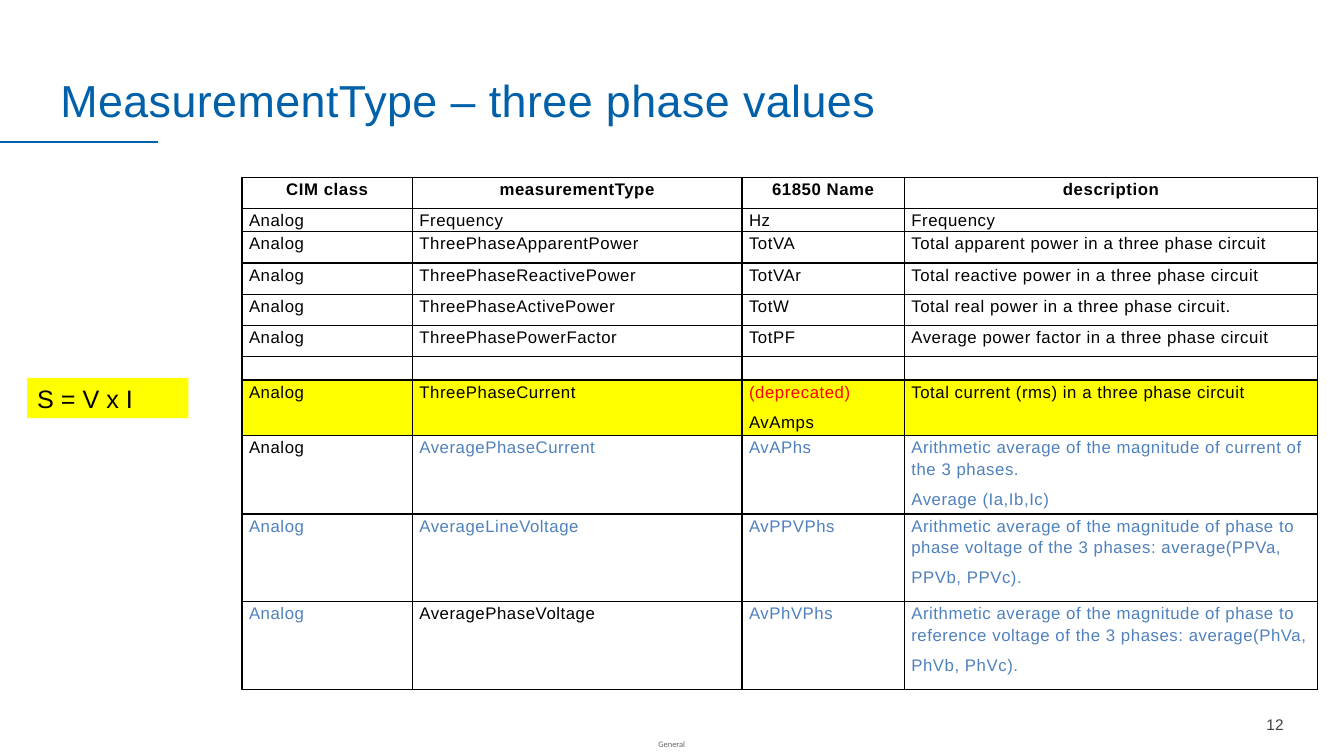
from lxml import etree
from pptx import Presentation
from pptx.dml.color import RGBColor
from pptx.enum.shapes import MSO_CONNECTOR, MSO_SHAPE
from pptx.enum.text import MSO_ANCHOR, PP_ALIGN
from pptx.oxml.ns import qn
from pptx.util import Inches, Pt

BLACK = RGBColor(0x00, 0x00, 0x00)
BLUE = RGBColor(0x00, 0x60, 0xA9)
SOFT_BLUE = RGBColor(0x4F, 0x81, 0xBD)
RED = RGBColor(0xFF, 0x00, 0x00)
YELLOW = RGBColor(0xFF, 0xFF, 0x00)
GREY = RGBColor(0x62, 0x64, 0x69)
DARK_GREY = RGBColor(0x40, 0x40, 0x40)

# Content: one row per measurement, "\n" separates paragraphs
TITLE = "MeasurementType – three phase values"
ROWS = [
    ("CIM class", "measurementType", "61850 Name", "description"),
    ("Analog", "Frequency", "Hz", "Frequency"),
    ("Analog", "ThreePhaseApparentPower", "TotVA",
     "Total apparent power in a three phase circuit"),
    ("Analog", "ThreePhaseReactivePower", "TotVAr",
     "Total reactive power in a three phase circuit"),
    ("Analog", "ThreePhaseActivePower", "TotW",
     "Total real power in a three phase circuit."),
    ("Analog", "ThreePhasePowerFactor", "TotPF",
     "Average power factor in a three phase circuit"),
    ("", "", "", ""),
    ("Analog", "ThreePhaseCurrent", "(deprecated)\nAvAmps",
     "Total current (rms) in a three phase circuit"),
    ("Analog", "AveragePhaseCurrent", "AvAPhs",
     "Arithmetic average of the magnitude of current of the 3 phases.\n"
     "Average (Ia,Ib,Ic)"),
    ("Analog", "AverageLineVoltage", "AvPPVPhs",
     "Arithmetic average of the magnitude of phase to phase voltage "
     "of the 3 phases: average(PPVa,\nPPVb, PPVc)."),
    ("Analog", "AveragePhaseVoltage", "AvPhVPhs",
     "Arithmetic average of the magnitude of phase to reference voltage "
     "of the 3 phases: average(PhVa,\nPhVb, PhVc)."),
]
COL_WIDTHS = [1.69, 3.27, 1.61, 4.1]
ROW_HEIGHTS = [0.31, 0.23] + [0.31] * 4 + [0.23, 0.55, 0.78, 0.87, 0.87]
DEPRECATED_ROW = 7
FIRST_NEW_ROW = 8
BLACK_IN_NEW_ROWS = {(8, 0), (10, 1)}


def style(p, size, color, font="Arial", bold=False, spacing=0):
    for r in p.runs:
        r.font.name, r.font.size, r.font.bold = font, Pt(size), bold
        r.font.color.rgb = color
        if spacing:
            r.font._element.set("spc", str(spacing))


def add_text(s, text, box, size, color, font="Arial", inset=None,
             align=PP_ALIGN.LEFT, anchor=MSO_ANCHOR.TOP, wrap=True, spacing=0):
    tf = s.shapes.add_textbox(*map(Inches, box)).text_frame
    tf.word_wrap, tf.vertical_anchor = wrap, anchor
    if inset is not None:
        tf.margin_left = tf.margin_right = Inches(inset)
        tf.margin_top = tf.margin_bottom = Inches(inset)
    p = tf.paragraphs[0]
    p.text, p.alignment = text, align
    style(p, size, color, font, spacing=spacing)
    return p


def add_borders(cell):
    tc_pr = cell._tc.get_or_add_tcPr()
    for i, side in enumerate(("lnL", "lnR", "lnT", "lnB")):
        ln = etree.Element(qn("a:" + side), w=str(Pt(1)))
        fill = etree.SubElement(ln, qn("a:solidFill"))
        etree.SubElement(fill, qn("a:srgbClr"), val=str(BLACK))
        tc_pr.insert(i, ln)


def text_color(row, col, line):
    if (row, col, line) == (DEPRECATED_ROW, 2, 0):
        return RED
    if row >= FIRST_NEW_ROW and (row, col) not in BLACK_IN_NEW_ROWS:
        return SOFT_BLUE
    return BLACK


def fill_cell(cell, text, row, col):
    cell.margin_left = cell.margin_right = Inches(0.07)
    cell.margin_top = cell.margin_bottom = 0
    if row == DEPRECATED_ROW:
        cell.fill.solid()
        cell.fill.fore_color.rgb = YELLOW
    else:
        cell.fill.background()
    add_borders(cell)
    cell.text_frame.text = text
    for line, p in enumerate(cell.text_frame.paragraphs):
        p.line_spacing = 1.15
        p.space_after = Pt(3)
        if line:
            p.space_before = Pt(3)
        if row == 0:
            p.alignment = PP_ALIGN.CENTER
        style(p, 12, text_color(row, col, line), bold=row == 0, spacing=40)
        if not text:
            etree.SubElement(p._p, qn("a:endParaRPr"), sz="1200")


def main():
    prs = Presentation()
    prs.slide_width, prs.slide_height = Inches(13.33), Inches(7.5)
    s = prs.slides.add_slide(prs.slide_layouts[6])

    # Title and rule below it
    p = add_text(s, TITLE, (0.5, 0.42, 12.33, 0.89), 32, BLUE,
                 anchor=MSO_ANCHOR.BOTTOM, spacing=30)
    p.line_spacing = 0.9
    rule = s.shapes.add_connector(MSO_CONNECTOR.STRAIGHT, 0, Inches(1.41),
                                  Inches(1.57), Inches(1.41))
    rule.line.color.rgb, rule.line.width = BLUE, Pt(1.5)
    etree.SubElement(rule._element.spPr, qn("a:effectLst"))

    # Measurement table
    table = s.shapes.add_table(
        len(ROWS), len(COL_WIDTHS), Inches(2.4), Inches(1.76),
        Inches(sum(COL_WIDTHS)), Inches(sum(ROW_HEIGHTS))).table
    table.first_row = table.horz_banding = False
    for column, width in zip(table.columns, COL_WIDTHS):
        column.width = Inches(width)
    for i, (texts, height) in enumerate(zip(ROWS, ROW_HEIGHTS)):
        table.rows[i].height = Inches(height)
        for j, text in enumerate(texts):
            fill_cell(table.cell(i, j), text, i, j)

    # Formula note
    note = s.shapes.add_shape(MSO_SHAPE.RECTANGLE, Inches(0.27), Inches(3.75),
                              Inches(1.6), Inches(0.4))
    note.shadow.inherit = False
    note.fill.solid()
    note.fill.fore_color.rgb = YELLOW
    note.line.fill.background()
    note.text_frame.text = "S = V x I"
    note.text_frame.vertical_anchor = MSO_ANCHOR.TOP
    p = note.text_frame.paragraphs[0]
    p.alignment = PP_ALIGN.LEFT
    style(p, 18, BLACK)

    # Footer
    add_text(s, "General", (6.53, 7.33, 0.29, 0.1), 6, GREY, "Calibri",
             inset=0, wrap=False)
    add_text(s, "12", (11.96, 6.99, 0.87, 0.4), 11, DARK_GREY,
             align=PP_ALIGN.RIGHT, anchor=MSO_ANCHOR.MIDDLE)

    prs.save("out.pptx")


if __name__ == "__main__":
    main()
